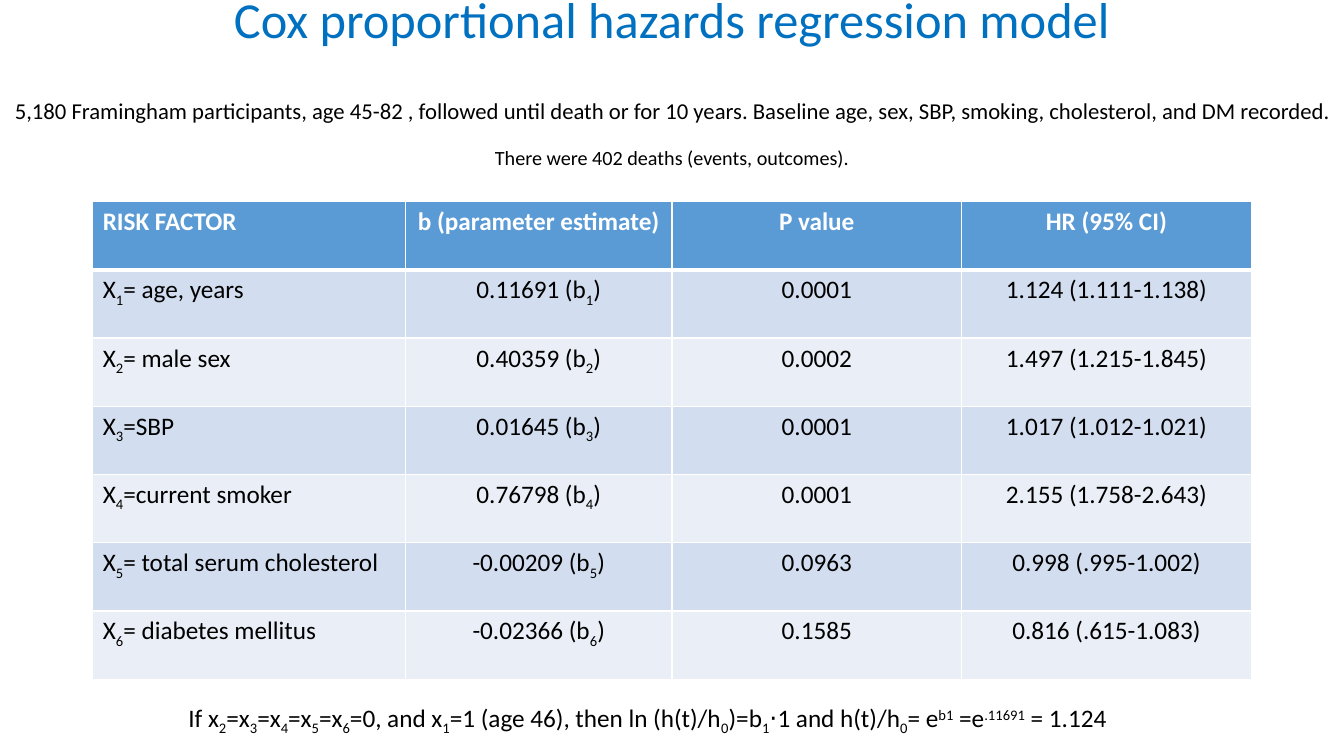
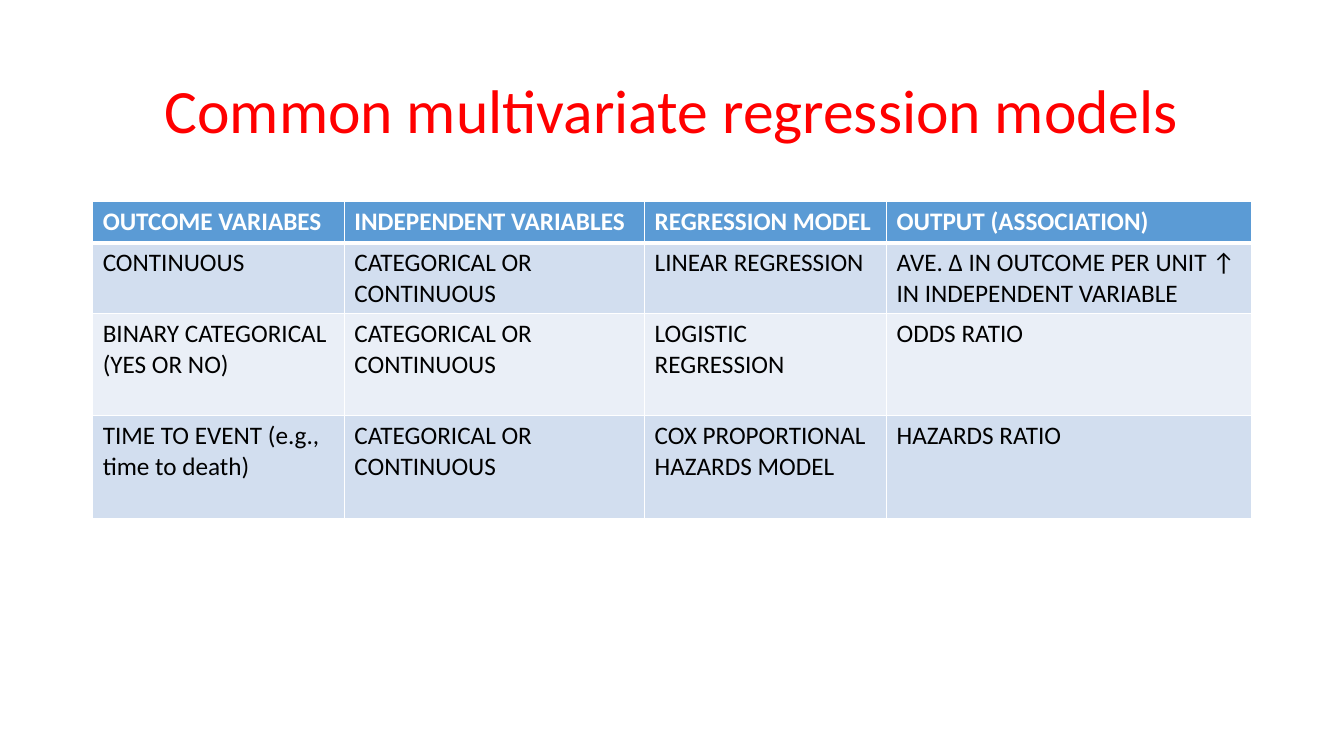
"""Build two slides on Cox regression and common multivariate regression models."""
from dataclasses import dataclass

from pptx import Presentation
from pptx import util as u
from pptx.dml.color import RGBColor
from pptx.enum import text
from pptx.oxml import parse_xml
from pptx.oxml.ns import nsdecls


@dataclass(frozen=True)
class Theme:
    font: str = "Calibri"
    blue: str = "0070C0"
    red: str = "FF0000"
    black: str = "000000"
    white: str = "FFFFFF"
    header: str = "5B9BD5"
    bands: tuple = ("D2DEEF", "EAEFF7")
    title: float = 44
    small_title: float = 36
    summary: float = 16.2
    events: float = 14.4
    body: float = 18
    thin: float = 1
    thick: float = 3


theme = Theme()
presentation = Presentation()
presentation.slide_width = u.Inches(13.33)
presentation.slide_height = u.Inches(7.5)
column = presentation.slide_width / 145
row = presentation.slide_height / 75
left, middle = text.PP_ALIGN.LEFT, text.PP_ALIGN.CENTER


def write(paragraph, content, size, color, alignment, bold=False):
    """Write text whose |parts between bars| are subscripts, or superscripts after ^."""
    paragraph.alignment = alignment
    for position, part in enumerate(content.split("|")):
        run = paragraph.add_run()
        run.text = part.lstrip("^")
        run.font.name = theme.font
        run.font.size = u.Pt(size)
        run.font.bold = bold
        run.font.color.rgb = RGBColor.from_string(color)
        if position % 2:
            baseline = "30000" if part.startswith("^") else "-25000"
            run.font._element.set("baseline", baseline)


def add_text(slide, place, lines, alignment, anchor, spacing=1.0):
    """Add a text box; each line is its text, size, colour and space before."""
    x, y, width, height = place
    box = slide.shapes.add_textbox(int(x * column), int(y * row),
                                   int(width * column), int(height * row))
    frame = box.text_frame
    frame.word_wrap = True
    frame.vertical_anchor = anchor
    for index, (content, size, color, space) in enumerate(lines):
        paragraph = frame.add_paragraph() if index else frame.paragraphs[0]
        paragraph.line_spacing = spacing
        if index:
            paragraph.space_before = u.Pt(space)
        write(paragraph, content, size, color, alignment)
    return frame


cox_rows = [["RISK FACTOR", "b (parameter estimate)", "P value", "HR (95% CI)"]]
risk_factors = [
    ("= age, years", "0.11691", "0.0001", "1.124 (1.111-1.138)"),
    ("= male sex", "0.40359", "0.0002", "1.497 (1.215-1.845)"),
    ("=SBP", "0.01645", "0.0001", "1.017 (1.012-1.021)"),
    ("=current smoker", "0.76798", "0.0001", "2.155 (1.758-2.643)"),
    ("= total serum cholesterol", "-0.00209", "0.0963", "0.998 (.995-1.002)"),
    ("= diabetes mellitus", "-0.02366", "0.1585", "0.816 (.615-1.083)"),
]
for number, (factor, estimate, p_value, ratio) in enumerate(risk_factors, 1):
    cox_rows.append([f"X|{number}|{factor}", f"{estimate} (b|{number}|)", p_value, ratio])

predictors = "CATEGORICAL OR CONTINUOUS"
model_rows = [
    ["OUTCOME VARIABES", "INDEPENDENT VARIABLES", "REGRESSION MODEL", "OUTPUT (ASSOCIATION)"],
    ["CONTINUOUS", predictors, "LINEAR REGRESSION",
     "AVE. Δ IN OUTCOME PER UNIT ↑ IN INDEPENDENT VARIABLE"],
    ["BINARY CATEGORICAL (YES OR NO)", predictors, "LOGISTIC REGRESSION", "ODDS RATIO"],
    ["TIME TO EVENT (e.g., time to death)", predictors,
     "COX PROPORTIONAL HAZARDS MODEL", "HAZARDS RATIO"],
]

cox_slide, models_slide = [
    presentation.slides.add_slide(presentation.slide_layouts[6]) for _ in range(2)]

cox_heading = add_text(
    cox_slide, (0, 0, 145, 18.5),
    [("Cox proportional hazards regression model", theme.small_title, theme.blue, 0),
     ("5,180 Framingham participants, age 45-82 , followed until death or for 10 years. "
      "Baseline age, sex, SBP, smoking, cholesterol, and DM recorded.",
      theme.summary, theme.black, 36),
     ("There were 402 deaths (events, outcomes).", theme.events, theme.black, 17)],
    middle, text.MSO_ANCHOR.MIDDLE, 0.9)
cox_heading.margin_left = cox_heading.margin_right = u.Inches(0.05)
cox_heading.margin_top = 0
cox_heading.margin_bottom = u.Inches(0.22)

add_text(models_slide, (10, 4, 125, 14.5),
         [("Common multivariate regression models", theme.title, theme.red, 0)],
         middle, text.MSO_ANCHOR.MIDDLE, 0.9)

tables = [
    (cox_slide, cox_rows, (33.75, 28.75, 31.25, 31.25), [6.77] * 7,
     (left, middle, middle, middle)),
    (models_slide, model_rows, (27.15, 32.4, 26.1, 39.35), (4.1, 7, 10.15, 10.15), (left,) * 4),
]
for slide, contents, widths, heights, alignments in tables:
    table = slide.shapes.add_table(
        len(heights), len(widths), int(10 * column), int(20 * row),
        int(sum(widths) * column), int(sum(heights) * row)).table
    for table_column, width in zip(table.columns, widths):
        table_column.width = int(width * column)
    for row_index, (table_row, height) in enumerate(zip(table.rows, heights)):
        table_row.height = int(height * row)
        is_header = row_index == 0
        fill = theme.header if is_header else theme.bands[(row_index - 1) % 2]
        ink = theme.white if is_header else theme.black
        edges = {"lnL": theme.thin, "lnR": theme.thin,
                 "lnT": theme.thick if row_index == 1 else theme.thin,
                 "lnB": theme.thick if is_header else theme.thin}
        for cell, content, alignment in zip(table_row.cells, contents[row_index], alignments):
            write(cell.text_frame.paragraphs[0], content, theme.body, ink, alignment, is_header)
            properties = cell._tc.get_or_add_tcPr()
            for edge, weight in edges.items():
                properties.append(parse_xml(
                    f'<a:{edge} {nsdecls("a")} w="{u.Pt(weight)}"><a:solidFill>'
                    f'<a:srgbClr val="{theme.white}"/></a:solidFill></a:{edge}>'))
            cell.fill.solid()
            cell.fill.fore_color.rgb = RGBColor.from_string(fill)

add_text(cox_slide, (19.25, 69.2, 104.5, 4),
         [("If x|2|=x|3|=x|4|=x|5|=x|6|=0, and x|1|=1 (age 46), then ln (h(t)/h|0|)=b|1|⋅1 "
           "and h(t)/h|0|= e|^b1| =e|^.11691| = 1.124", theme.body, theme.black, 0)],
         left, text.MSO_ANCHOR.TOP)

presentation.save("out.pptx")
